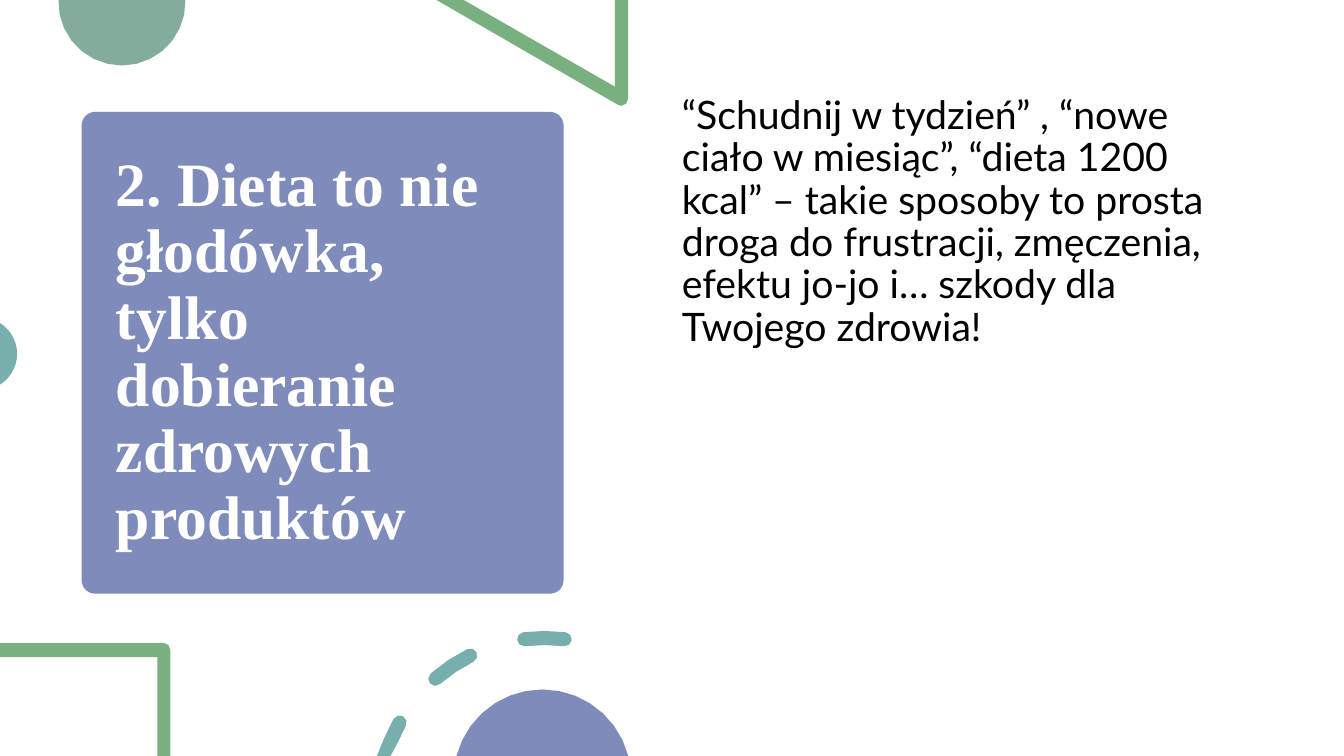
from math import cos, radians, sin

from pptx import Presentation
from pptx.dml.color import RGBColor
from pptx.enum.shapes import MSO_SHAPE
from pptx.enum.text import MSO_ANCHOR, MSO_AUTO_SIZE, PP_ALIGN
from pptx.util import Inches, Pt

WIDTH, HEIGHT = 13.33, 7.5
WHITE = RGBColor(0xFF, 0xFF, 0xFF)
BLACK = RGBColor(0, 0, 0)
PERIWINKLE = RGBColor(0x7F, 0x8B, 0xBA)
SAGE = RGBColor(0x83, 0xAD, 0x9A)
GREEN = RGBColor(0x78, 0xB0, 0x7F)
TEAL = RGBColor(0x77, 0xAF, 0xAC)

TITLE = "2. Dieta to nie głodówka, tylko dobieranie zdrowych produktów"
BODY = (
    "“Schudnij w tydzień” , “nowe ciało w miesiąc”, “dieta 1200 kcal” – "
    "takie sposoby to prosta droga do frustracji, zmęczenia, efektu jo-jo i… "
    "szkody dla Twojego zdrowia!"
)

TRIANGLE = [(6.23, 0), (6.1, 0), (6.1, 0.86), (4.6, 0), (4.33, 0),
            (6.13, 1.04), (6.16, 1.05), (6.21, 1.03), (6.23, 0.98)]
SQUARE = [(0, 6.38), (0, 6.52), (1.56, 6.52), (1.56, 7.5), (1.69, 7.5),
          (1.69, 6.45), (1.67, 6.4), (1.63, 6.38)]
# Centre, radius, first and last angle (clockwise from the right), colour
DISCS = [
    ((1.21, 0.02), 0.63, -2, 182, SAGE),
    ((-0.19, 3.51), 0.36, -58, 58, TEAL),
    ((5.38, 7.72), 0.88, 194.5, 345.5, PERIWINKLE),
]
RING_CENTRE, RING_RADIUS, DASH_WIDTH = (5.4, 7.98), 1.65, 0.14
DASHES = [(195, 209.5), (229, 243.5), (263, 277)]


def fill_plain(shape, color):
    shape.fill.solid()
    shape.fill.fore_color.rgb = color
    shape.line.fill.background()
    shape.shadow.inherit = False


def add_outlines(slide, outlines, color):
    """Draw closed outlines as one shape, cut at the slide's edges."""
    contours = [
        [(Inches(max(x, 0)), Inches(min(max(y, 0), HEIGHT))) for x, y in outline]
        for outline in outlines
    ]
    builder = slide.shapes.build_freeform(*contours[0][0])
    for index, contour in enumerate(contours):
        if index:
            builder.move_to(*contour[0])
        builder.add_line_segments(contour[1:], close=True)
    fill_plain(builder.convert_to_shape(), color)


def arc(centre, radius, start, end, steps):
    angles = [radians(start + (end - start) * i / steps) for i in range(steps + 1)]
    return [(centre[0] + radius * cos(a), centre[1] + radius * sin(a)) for a in angles]


def dash(start, end):
    """Outline of one round-ended dash of the ring."""
    half = DASH_WIDTH / 2
    tail, head = arc(RING_CENTRE, RING_RADIUS, start, end, 1)
    return (
        arc(RING_CENTRE, RING_RADIUS + half, start, end, 2)
        + arc(head, half, end, end + 180, 4)[1:-1]
        + arc(RING_CENTRE, RING_RADIUS - half, end, start, 2)
        + arc(tail, half, start + 180, start + 360, 4)[1:-1]
    )


def add_decorations(slide):
    for outline in (TRIANGLE, SQUARE):
        add_outlines(slide, [outline], GREEN)
    for centre, radius, start, end, color in DISCS:
        add_outlines(slide, [arc(centre, radius, start, end, 14)], color)
    add_outlines(slide, [dash(start, end) for start, end in DASHES], TEAL)


def add_block(slide, preset, left, top, width, height, color):
    block = slide.shapes.add_shape(preset, *map(Inches, (left, top, width, height)))
    fill_plain(block, color)
    return block


def set_text(shape, text, font_name, size, color, anchor):
    frame = shape.text_frame
    frame.word_wrap = True
    frame.auto_size = MSO_AUTO_SIZE.NONE
    frame.vertical_anchor = anchor
    frame.text = text
    paragraph = frame.paragraphs[0]
    paragraph.alignment = PP_ALIGN.LEFT
    paragraph.line_spacing = 0.9
    paragraph.font.name = font_name
    paragraph.font.size = Pt(size)
    paragraph.font.color.rgb = color
    return paragraph


def add_title_card(slide, left, top, side):
    card = add_block(slide, MSO_SHAPE.ROUNDED_RECTANGLE, left, top, side, side, PERIWINKLE)
    card.adjustments[0] = 0.028

    title = slide.shapes.title
    margin_x, margin_y = side * 0.05, side * 0.023
    title.left, title.top = Inches(left + margin_x), Inches(top + margin_y)
    title.width, title.height = Inches(side - 2 * margin_x), Inches(side - 2 * margin_y)
    paragraph = set_text(title, TITLE, "Times New Roman", 44, WHITE, MSO_ANCHOR.MIDDLE)
    paragraph.font.bold = True
    card.element.addnext(title.element)  # title in front of the card


def add_body(slide, left, top, width, height):
    box = slide.shapes.add_textbox(*map(Inches, (left, top, width, height)))
    paragraph = set_text(box, BODY, "Lato", 28, BLACK, MSO_ANCHOR.TOP)
    paragraph.space_before = Pt(10)


def main():
    presentation = Presentation()
    presentation.slide_width, presentation.slide_height = Inches(WIDTH), Inches(HEIGHT)
    slide = presentation.slides.add_slide(presentation.slide_layouts[5])
    add_block(slide, MSO_SHAPE.RECTANGLE, 0, 0, WIDTH, HEIGHT, WHITE)
    add_title_card(slide, 0.81, 1.11, 4.78)
    add_body(slide, WIDTH / 2, HEIGHT * 0.12, 5.75, 5.35)
    add_decorations(slide)
    presentation.save("out.pptx")


if __name__ == "__main__":
    main()
